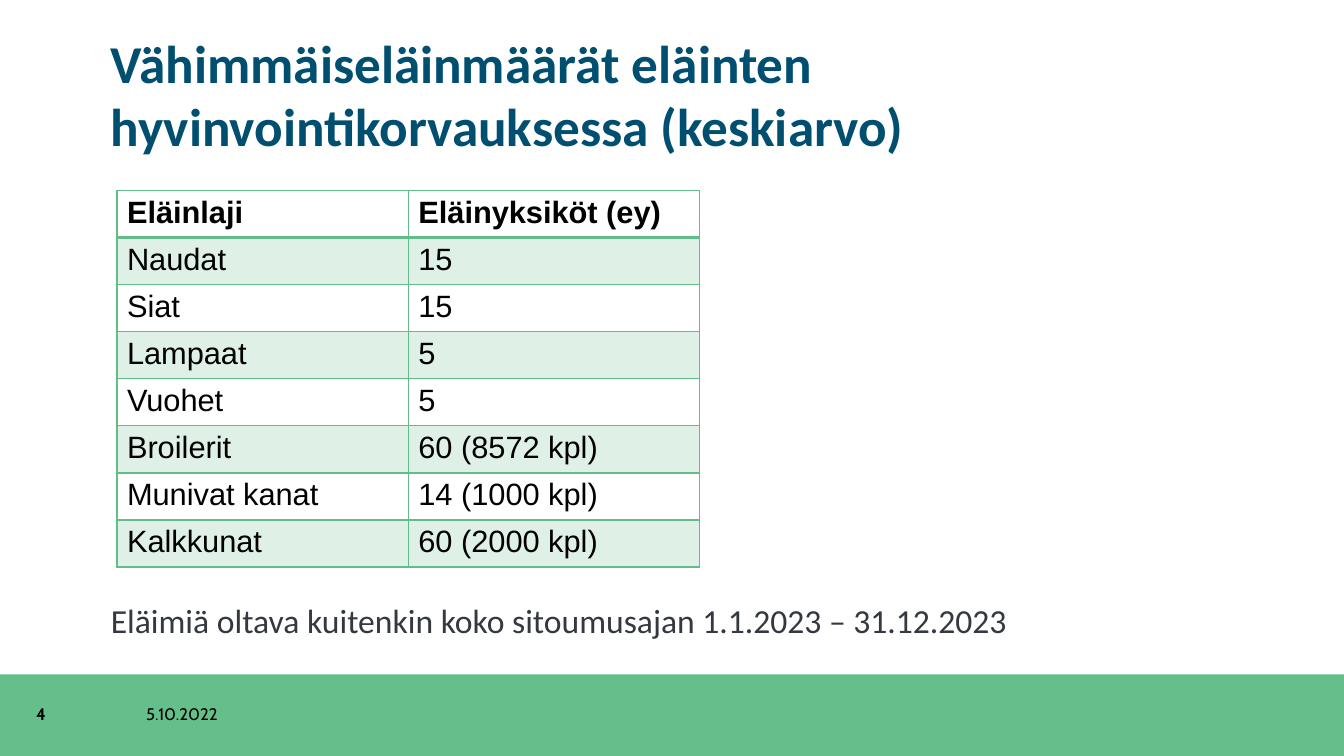
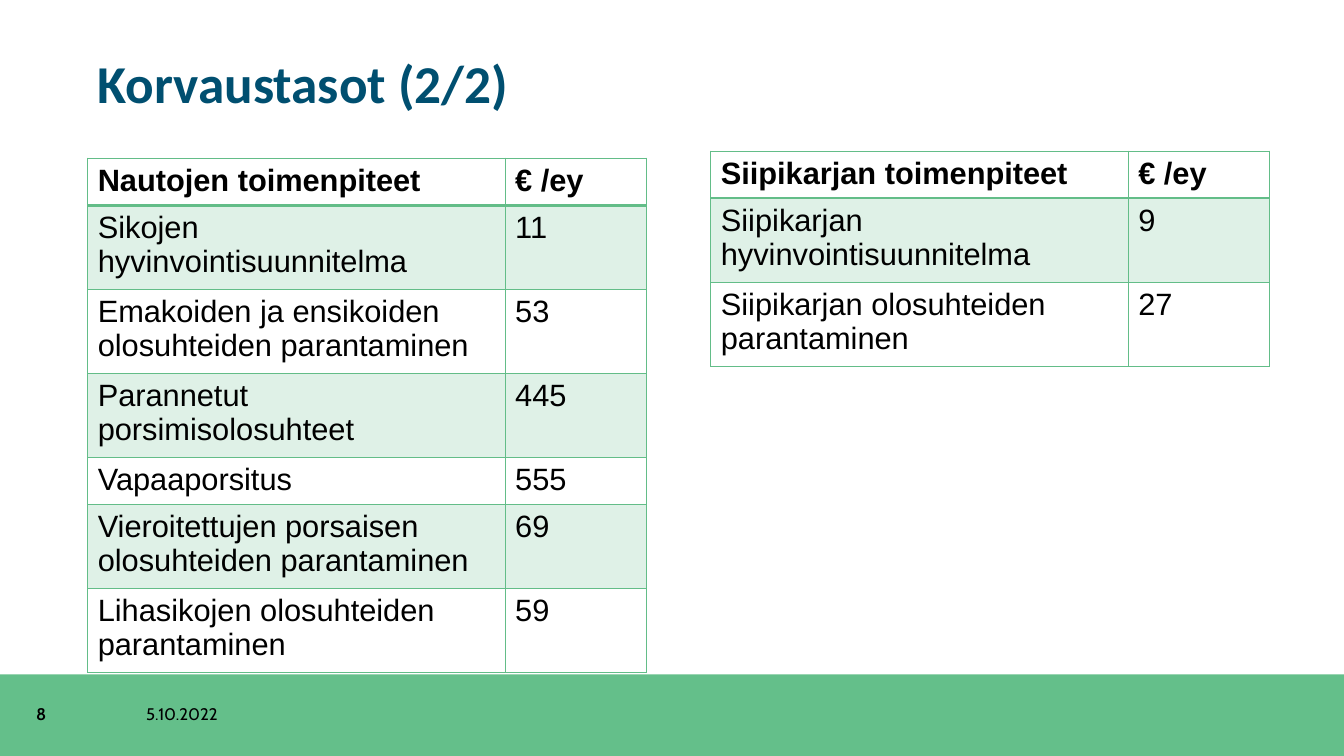
import pptx
import pptx.dml.color
import pptx.enum.shapes
import pptx.enum.text
import pptx.oxml.ns
import pptx.util
from dataclasses import dataclass
from lxml import etree

Inches = pptx.util.Inches
Pt = pptx.util.Pt
Color = pptx.dml.color.RGBColor.from_string
qn = pptx.oxml.ns.qn


@dataclass(frozen=True)
class Theme:
    band: str = "64BF8A"
    grid: str = "63BD88"
    title: str = "004F70"
    note: str = "343841"
    black: str = "000000"
    heading_font: str = "Calibri"
    table_font: str = "Arial"
    footer_font: str = "Cabin"
    title_size: int = 38
    note_size: int = 24
    table_size: int = 22
    footer_size: int = 12
    stripe_alpha: int = 20


theme = Theme()


def write(frame, text, font, size, color, bold=False):
    frame.word_wrap = True
    span = frame.paragraphs[0].add_run()
    span.text = text
    span.font.name = font
    span.font.size = Pt(size)
    span.font.bold = bold
    span.font.color.rgb = Color(color)


def add_grid(page, left, top, columns, rows):
    width = sum(columns)
    row_height = 0.46
    table = page.shapes.add_table(
        len(rows), len(columns), Inches(left), Inches(top),
        Inches(width), Inches(row_height * len(rows))).table
    table.horz_banding = False
    for column, column_width in zip(table.columns, columns):
        column.width = Inches(column_width)
    for row_index, values in enumerate(rows):
        header = row_index == 0
        for column_index, value in enumerate(values):
            cell = table.cell(row_index, column_index)
            write(cell.text_frame, value, theme.table_font, theme.table_size,
                  theme.black, header)
            properties = cell._tc.get_or_add_tcPr()
            for side in ("lnL", "lnR", "lnT", "lnB"):
                under_header = (row_index, side) in ((0, "lnB"), (1, "lnT"))
                border = etree.SubElement(properties, qn(f"a:{side}"),
                                          w=str(Pt(2 if under_header else 1)))
                paint = etree.SubElement(border, qn("a:solidFill"))
                etree.SubElement(paint, qn("a:srgbClr"), val=theme.grid)
            if row_index % 2:
                cell.fill.solid()
                cell.fill.fore_color.rgb = Color(theme.grid)
                tint = properties.find(qn("a:solidFill")).find(qn("a:srgbClr"))
                etree.SubElement(tint, qn("a:alpha"),
                                 val=str(theme.stripe_alpha * 1000))
            else:
                cell.fill.background()


minimum_animals = [
    ("Eläinlaji", "Eläinyksiköt (ey)"),
    ("Naudat", "15"),
    ("Siat", "15"),
    ("Lampaat", "5"),
    ("Vuohet", "5"),
    ("Broilerit", "60 (8572 kpl)"),
    ("Munivat kanat", "14 (1000 kpl)"),
    ("Kalkkunat", "60 (2000 kpl)"),
]
pig_measures = [
    ("Nautojen toimenpiteet", "€ /ey"),
    ("Sikojen hyvinvointisuunnitelma", "11"),
    ("Emakoiden ja ensikoiden olosuhteiden parantaminen", "53"),
    ("Parannetut porsimisolosuhteet", "445"),
    ("Vapaaporsitus", "555"),
    ("Vieroitettujen porsaisen olosuhteiden parantaminen", "69"),
    ("Lihasikojen olosuhteiden parantaminen", "59"),
]
poultry_measures = [
    ("Siipikarjan toimenpiteet", "€ /ey"),
    ("Siipikarjan hyvinvointisuunnitelma", "9"),
    ("Siipikarjan olosuhteiden parantaminen", "27"),
]

title_style = (theme.heading_font, theme.title_size, theme.title, True)
note_style = (theme.heading_font, theme.note_size, theme.note)
number_style = (theme.footer_font, theme.footer_size, theme.black, True)
date_style = (theme.footer_font, theme.footer_size, theme.black)
measure_columns = (4.14, 1.4)

pages = [
    {
        "number": "4",
        "texts": [
            ((1, 0.24, 10.29, 1.38),
             "Vähimmäiseläinmäärät eläinten hyvinvointikorvauksessa (keskiarvo)",
             title_style),
            ((1, 5.9, 9.88, 0.5),
             "Eläimiä oltava kuitenkin koko sitoumusajan 1.1.2023 – 31.12.2023",
             note_style),
        ],
        "tables": [(1.16, 1.89, (2.89, 2.89), minimum_animals)],
    },
    {
        "number": "8",
        "texts": [((0.87, 0.45, 6.67, 0.74), "Korvaustasot (2/2)", title_style)],
        "tables": [
            (0.87, 1.57, measure_columns, pig_measures),
            (7.05, 1.5, measure_columns, poultry_measures),
        ],
    },
]

deck = pptx.Presentation()
deck.slide_width = Inches(13.33)
deck.slide_height = Inches(7.5)

for content in pages:
    page = deck.slides.add_slide(deck.slide_layouts[6])
    band = page.shapes.add_shape(
        pptx.enum.shapes.MSO_SHAPE.RECTANGLE,
        0, Inches(6.69), deck.slide_width, Inches(0.81))
    band.shadow.inherit = False
    band.fill.solid()
    band.fill.fore_color.rgb = Color(theme.band)
    band.line.fill.background()

    footer = [
        ((0.26, 6.93, 0.87, 0.3), content["number"], number_style),
        ((1.35, 6.93, 2.39, 0.3), "5.10.2022", date_style),
    ]
    for position, text, style in footer + content["texts"]:
        box = page.shapes.add_textbox(*map(Inches, position))
        box.text_frame.vertical_anchor = pptx.enum.text.MSO_ANCHOR.MIDDLE
        write(box.text_frame, text, *style)

    for left, top, columns, rows in content["tables"]:
        add_grid(page, left, top, columns, rows)

deck.save("out.pptx")
